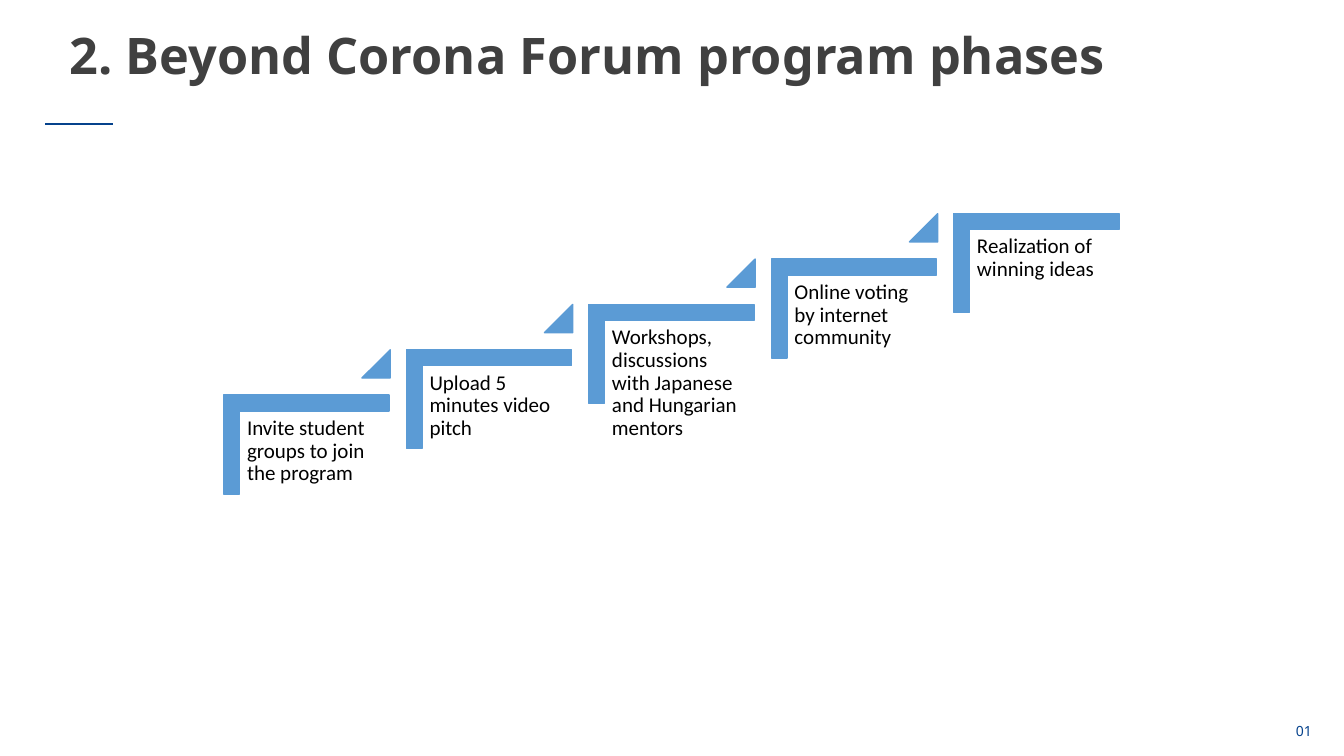
from pptx import Presentation
from pptx.dml.color import RGBColor
from pptx.enum.shapes import MSO_CONNECTOR, MSO_SHAPE
from pptx.enum.text import MSO_ANCHOR, MSO_AUTO_SIZE, PP_ALIGN
from pptx.oxml.ns import qn
from pptx.util import Inches, Pt
from lxml import etree

TITLE = "2. Beyond Corona Forum program phases"
PAGE = "01"
PHASES = [
    "Invite student groups to join the program",
    "Upload 5 minutes video pitch",
    "Workshops, discussions with Japanese and Hungarian mentors",
    "Online voting by internet community",
    "Realization of winning ideas",
]

NAVY = RGBColor(0x05, 0x42, 0x8C)
BLUE = RGBColor(0x5B, 0x9B, 0xD5)
GREY = RGBColor(0x40, 0x40, 0x40)
BLACK = RGBColor(0, 0, 0)
LEFT, RIGHT = PP_ALIGN.LEFT, PP_ALIGN.RIGHT
TOP, MIDDLE = MSO_ANCHOR.TOP, MSO_ANCHOR.MIDDLE
CORNER, TRIANGLE = MSO_SHAPE.CORNER, MSO_SHAPE.RIGHT_TRIANGLE
TRIANGLE = MSO_SHAPE.ISOSCELES_TRIANGLE
STRAIGHT = MSO_CONNECTOR.STRAIGHT
NO_FIT = MSO_AUTO_SIZE.NONE

STEP, RISE = 1.81, 0.45
CORNER_X, CORNER_Y = 2.55, 3.59
TEXT_X, TEXT_Y = 2.39, 4.08
ARROW_X, ARROW_Y = 3.59, 3.47


def write(sp, text, size, color, font="Noto Sans", bold=False, align=LEFT,
          anchor=TOP, spacing=1.0, inset=None):
    """Fill a text shape with one formatted paragraph."""
    tf = sp.text_frame
    tf.word_wrap = True
    tf.auto_size = NO_FIT
    tf.vertical_anchor = anchor
    if inset is not None:
        tf.margin_left = tf.margin_right = Inches(inset)
        tf.margin_top = tf.margin_bottom = Inches(inset)
    p = tf.paragraphs[0]
    p.alignment = align
    p.line_spacing = spacing
    r = p.add_run()
    r.text = text
    r.font.name = font
    r.font.size = Pt(size)
    r.font.bold = bold
    r.font.color.rgb = color


def add_blue(slide, kind, x, y, w, h, adjustments, rotation=0):
    """Add a blue preset shape."""
    sp = slide.shapes.add_shape(kind, Inches(x), Inches(y), Inches(w), Inches(h))
    sp.shadow.inherit = False
    sp.rotation = rotation
    for i, value in enumerate(adjustments):
        sp.adjustments[i] = value
    sp.fill.solid()
    sp.fill.fore_color.rgb = BLUE
    sp.line.color.rgb = BLUE
    sp.line.width = Pt(1)


def add_box(slide, x, y, w, h, text, **fmt):
    """Add a text box."""
    sp = slide.shapes.add_textbox(Inches(x), Inches(y), Inches(w), Inches(h))
    write(sp, text, **fmt)


def main():
    """Build the slide and save it."""
    prs = Presentation()
    prs.slide_width, prs.slide_height = Inches(13.33), Inches(7.5)
    slide = prs.slides.add_slide(prs.slide_layouts[5])

    title = slide.shapes.title
    title.left, title.top = Inches(0.59), Inches(0.34)
    title.width, title.height = Inches(11.03), Inches(0.47)
    write(title, TITLE, size=36, color=GREY, bold=True, anchor=MIDDLE, spacing=0.9)

    rule = slide.shapes.add_connector(
        STRAIGHT, Inches(0.45), Inches(1.23), Inches(1.12), Inches(1.23))
    rule.line.color.rgb = NAVY
    rule.line.width = Pt(2)
    etree.SubElement(rule._element.spPr, qn("a:effectLst"))

    add_box(slide, 12.44, 7.12, 0.67, 0.27, PAGE, size=10, color=NAVY, align=RIGHT)

    for i, phase in enumerate(PHASES):
        dx, dy = i * STEP, -i * RISE
        add_blue(slide, CORNER, CORNER_X + dx, CORNER_Y + dy, 0.98, 1.64,
                 (0.16, 0.16), rotation=90)
        add_box(slide, TEXT_X + dx, TEXT_Y + dy, 1.48, 1.3, phase, size=15,
                color=BLACK, font="Calibri", spacing=0.9, inset=0.06)
        if i < len(PHASES) - 1:
            add_blue(slide, TRIANGLE, ARROW_X + dx, ARROW_Y + dy, 0.28, 0.28, (1,))

    prs.save("out.pptx")


if __name__ == "__main__":
    main()
